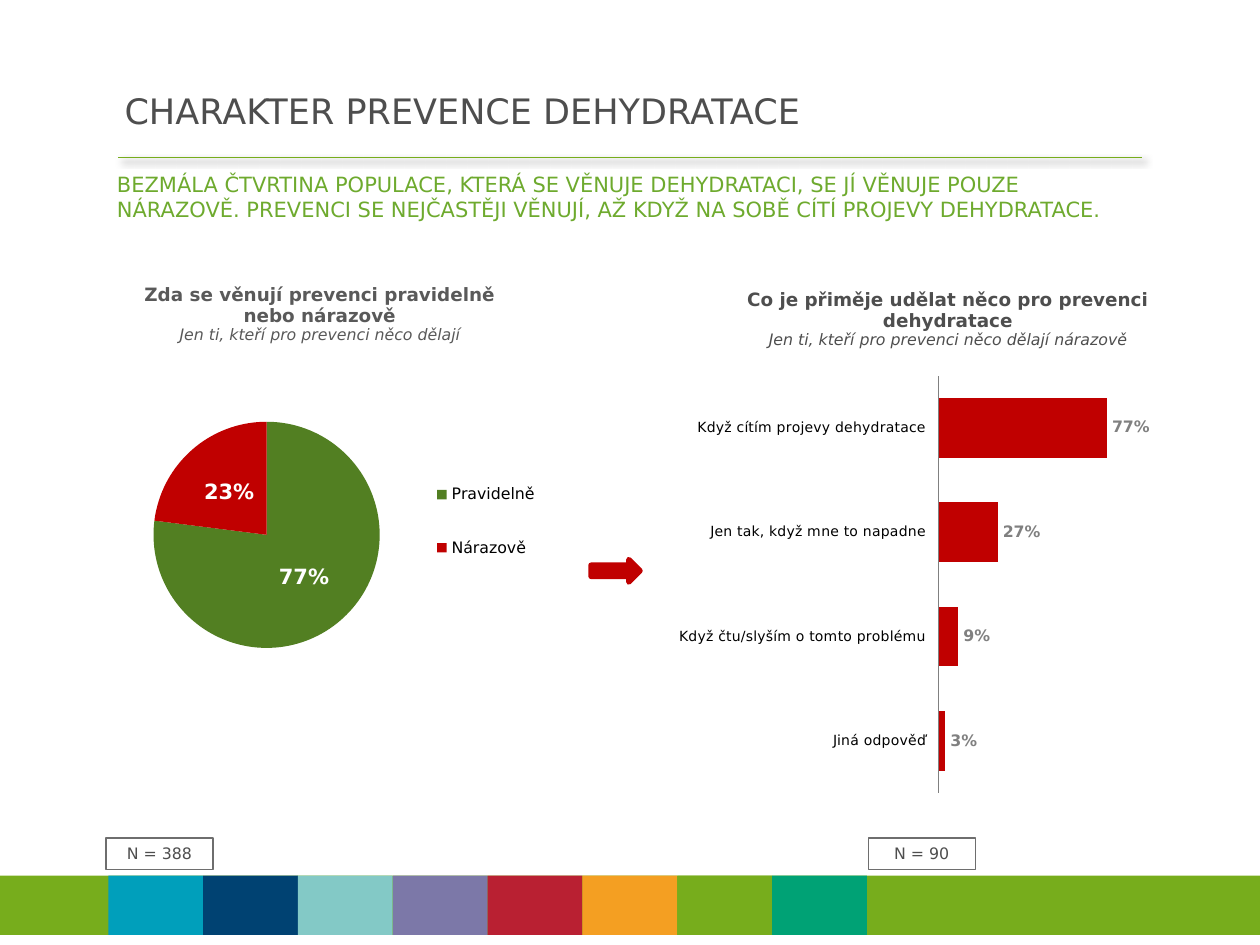
from lxml import etree
from pptx import Presentation
from pptx.chart.data import CategoryChartData
from pptx.dml.color import RGBColor
from pptx.enum.chart import XL_CHART_TYPE, XL_LABEL_POSITION, XL_LEGEND_POSITION, XL_TICK_LABEL_POSITION, XL_TICK_MARK
from pptx.enum.shapes import MSO_CONNECTOR, MSO_SHAPE
from pptx.enum.text import MSO_ANCHOR, PP_ALIGN
from pptx.oxml import parse_xml
from pptx.oxml.ns import qn
from pptx.util import Inches, Pt

PIE = XL_CHART_TYPE.PIE
BAR = XL_CHART_TYPE.BAR_CLUSTERED
CENTER = PP_ALIGN.CENTER
MIDDLE = MSO_ANCHOR.MIDDLE
FONT = "DejaVu Sans"
DRAWING_NS = "http://schemas.openxmlformats.org/drawingml/2006/main"
COLORS = {
    "text": "4E4E4E", "pie title": "595959", "subtitle": "6EAA2E",
    "band": "77AD1C", "red": "C00000", "pie green": "527F22",
    "border": "6E6E6E", "label": "808080", "black": "000000", "white": "FFFFFF",
}
TILES = ["009FBB", "004272", "83C9C6", "7C78A8", "B92032", "F49F22", "77AD1C", "00A275"]


def style(font, size, color, bold=False, italic=False):
    font.name = FONT
    font.size = Pt(size)
    font.bold = bold
    font.italic = italic
    font.color.rgb = RGBColor.from_string(color)


def set_layout(parent, index, **values):
    layout = parent.find(qn("c:layout"))
    if layout is None:
        layout = etree.Element(qn("c:layout"))
        parent.insert(index, layout)
    manual = etree.SubElement(layout, qn("c:manualLayout"))
    for name, value in values.items():
        etree.SubElement(manual, qn(f"c:{name}")).set("val", str(value))


deck = Presentation()
deck.slide_width = Inches(10)
deck.slide_height = Inches(7.5)
page = deck.slides.add_slide(deck.slide_layouts[6])

rule = page.shapes.add_connector(
    MSO_CONNECTOR.STRAIGHT, Inches(0.94), Inches(1.25), Inches(9.06), Inches(1.25))
rule.line.color.rgb = RGBColor.from_string(COLORS["band"])
rule.line.width = Pt(0.75)
rule._element.spPr.append(parse_xml(
    f'<a:effectLst xmlns:a="{DRAWING_NS}">'
    '<a:outerShdw blurRad="50800" dist="38100" dir="2700000" algn="tl">'
    '<a:srgbClr val="000000"><a:alpha val="40000"/></a:srgbClr>'
    '</a:outerShdw></a:effectLst>'))

bands = [(0, 10, COLORS["band"])]
bands += [(0.86 + 0.7525 * i, 0.7525, color) for i, color in enumerate(TILES)]
for left, width, color in bands:
    band = page.shapes.add_shape(
        MSO_SHAPE.RECTANGLE, Inches(left), Inches(6.95), Inches(width), Inches(0.47))
    band.shadow.inherit = False
    band.fill.solid()
    band.fill.fore_color.rgb = RGBColor.from_string(color)
    band.line.fill.background()

headings = [
    (0.89, 0.62, 8.87, 0.51, 20, "text", MIDDLE, "CHARAKTER PREVENCE DEHYDRATACE"),
    (0.83, 1.31, 8.35, 0.79, 12, "subtitle", MSO_ANCHOR.TOP,
     "BEZMÁLA ČTVRTINA POPULACE, KTERÁ SE VĚNUJE DEHYDRATACI, SE JÍ VĚNUJE POUZE NÁRAZOVĚ. "
     "PREVENCI SE NEJČASTĚJI VĚNUJÍ, AŽ KDYŽ NA SOBĚ CÍTÍ PROJEVY DEHYDRATACE."),
]
for left, top, width, height, size, color, anchor, text in headings:
    box = page.shapes.add_textbox(Inches(left), Inches(top), Inches(width), Inches(height))
    box.text_frame.word_wrap = True
    box.text_frame.vertical_anchor = anchor
    para = box.text_frame.paragraphs[0]
    para.text = text
    style(para.font, size, COLORS[color])

for left, text in [(0.84, "N = 388"), (6.89, "N = 90")]:
    box = page.shapes.add_textbox(Inches(left), Inches(6.65), Inches(0.85), Inches(0.25))
    box.line.color.rgb = RGBColor.from_string(COLORS["border"])
    box.line.width = Pt(0.75)
    box.text_frame.word_wrap = True
    para = box.text_frame.paragraphs[0]
    para.text = text
    para.alignment = CENTER
    style(para.font, 9, COLORS["text"])

chart_specs = [
    (BAR, (4.74, 2.16, 5.04, 4.32),
     {"Když cítím projevy dehydratace": 0.77, "Jen tak, když mne to napadne": 0.27,
      "Když čtu/slyším o tomto problému": 0.09, "Jiná odpověď": 0.03},
     "Co je přiměje udělat něco pro prevenci dehydratace",
     "Jen ti, kteří pro prevenci něco dělají nárazově", "text",
     (0.23, 0.02), (0.538, 0.19, 0.344, 0.767), 9, "label", XL_LABEL_POSITION.OUTSIDE_END),
    (PIE, (0.38, 2.17, 4.09, 3.61),
     {"Pravidelně": 0.77, "Nárazově": 0.23},
     "Zda se věnují prevenci pravidelně nebo nárazově",
     "Jen ti, kteří pro prevenci něco dělají", "pie title",
     (0.18, 0.01), (0.205, 0.306, 0.439, 0.538), 12, "white", XL_LABEL_POSITION.CENTER),
]
charts = {}
for (kind, place, values, title, note, title_color, title_at, plot_at,
     label_size, label_color, label_position) in chart_specs:
    data = CategoryChartData(number_format="0%")
    data.categories = values.keys()
    data.add_series("Series 1", values.values())
    chart = page.shapes.add_chart(kind, *map(Inches, place), data).chart
    charts[kind] = chart
    style(chart.font, 9, COLORS["black"])
    chart.has_legend = kind == PIE

    frame = chart.chart_title.text_frame
    frame.text = title
    style(frame.paragraphs[0].font, 10.5, COLORS[title_color], bold=True)
    para = frame.add_paragraph()
    para.text = note
    style(para.font, 9, COLORS[title_color], italic=True)
    x, y = title_at
    set_layout(chart.chart_title._element, 1, xMode="edge", yMode="edge", x=x, y=y)
    x, y, w, h = plot_at
    set_layout(chart._chartSpace.chart.plotArea, 0, layoutTarget="inner",
               xMode="edge", yMode="edge", x=x, y=y, w=w, h=h)

    plot = chart.plots[0]
    plot.vary_by_categories = kind == PIE
    plot.has_data_labels = True
    labels = plot.data_labels
    labels.show_value = True
    labels.number_format = "0%"
    labels.number_format_is_linked = False
    labels.position = label_position
    style(labels.font, label_size, COLORS[label_color], bold=True)

pie = charts[PIE]
for i, color in enumerate(["pie green", "red"]):
    fill = pie.plots[0].series[0].points[i].format.fill
    fill.solid()
    fill.fore_color.rgb = RGBColor.from_string(COLORS[color])
pie.legend.position = XL_LEGEND_POSITION.LEFT
pie.legend.include_in_layout = False
style(pie.legend.font, 9, COLORS["black"])
set_layout(pie.legend._element, 1, xMode="edge", yMode="edge", x=0.72, y=0.39, w=0.26, h=0.31)

bar = charts[BAR]
bar.plots[0].gap_width = 75
fill = bar.plots[0].series[0].format.fill
fill.solid()
fill.fore_color.rgb = RGBColor.from_string(COLORS["red"])
bar.value_axis.visible = False
bar.value_axis.has_major_gridlines = False
bar.value_axis.minimum_scale = 0
bar.value_axis.maximum_scale = 1
axis = bar.category_axis
axis.reverse_order = True
axis.major_tick_mark = XL_TICK_MARK.NONE
axis.tick_label_position = XL_TICK_LABEL_POSITION.LOW
axis.format.line.color.rgb = RGBColor.from_string(COLORS["label"])
style(axis.tick_labels.font, 8, COLORS["black"])

arrow = page.shapes.add_shape(
    MSO_SHAPE.RIGHT_ARROW, Inches(4.69), Inches(4.44), Inches(0.39), Inches(0.18))
arrow.shadow.inherit = False
arrow.fill.solid()
arrow.fill.fore_color.rgb = RGBColor.from_string(COLORS["red"])
arrow.line.color.rgb = RGBColor.from_string(COLORS["red"])
arrow.line.width = Pt(3)

deck.save("out.pptx")
